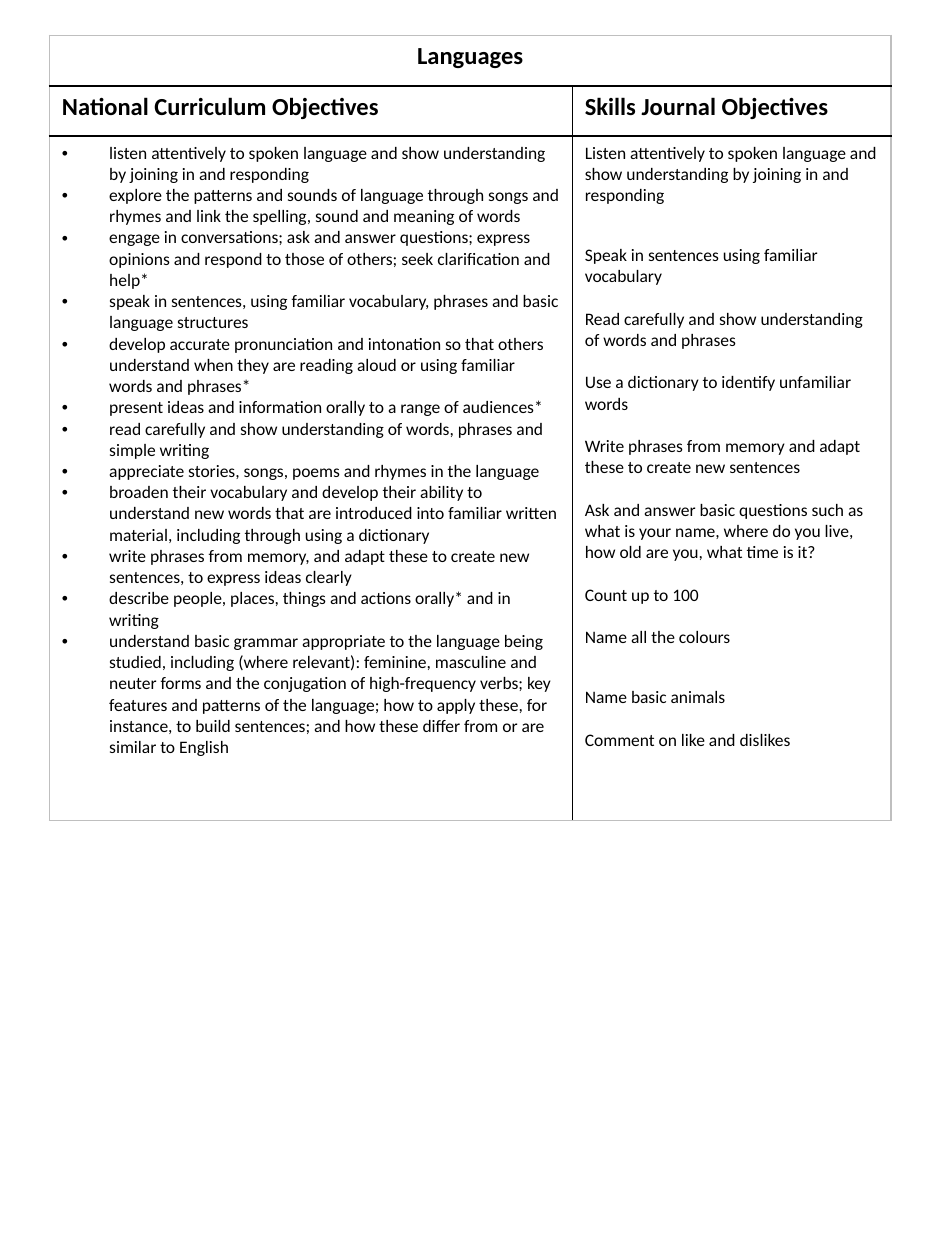
"""Build a one-page table of language curriculum and skills journal objectives."""
from lxml import etree
from pptx import Presentation
from pptx.dml.color import RGBColor
from pptx.enum.text import PP_ALIGN
from pptx.oxml.ns import qn
from pptx.util import Pt

LEFT, CENTER = PP_ALIGN.LEFT, PP_ALIGN.CENTER
BLACK, GREY, WHITE = "000000", "BFBFBF", "FFFFFF"
ROW_HEIGHTS = [28.8, 28.8, 391]
COLUMN_WIDTHS = [298.8, 182.2]
LINE_GAP, WIDE_GAP = 12.2, 22

NATIONAL_OBJECTIVES = [
    "listen attentively to spoken language and show understanding by joining in and responding",
    "explore the patterns and sounds of language through songs and rhymes and link the spelling, "
    "sound and meaning of words",
    "engage in conversations; ask and answer questions; express opinions and respond to those of "
    "others; seek clarification and help*",
    "speak in sentences, using familiar vocabulary, phrases and basic language structures",
    "develop accurate pronunciation and intonation so that others understand when they are reading "
    "aloud or using familiar words and phrases*",
    "present ideas and information orally to a range of audiences*",
    "read carefully and show understanding of words, phrases and simple writing",
    "appreciate stories, songs, poems and rhymes in the language",
    "broaden their vocabulary and develop their ability to understand new words that are introduced "
    "into familiar written material, including through using a dictionary",
    "write phrases from memory, and adapt these to create new sentences, to express ideas clearly",
    "describe people, places, things and actions orally* and in writing",
    "understand basic grammar appropriate to the language being studied, including (where relevant): "
    "feminine, masculine and neuter forms and the conjugation of high-frequency verbs; key features "
    "and patterns of the language; how to apply these, for instance, to build sentences; and how "
    "these differ from or are similar to English",
]
SKILLS_OBJECTIVES = [
    ("Listen attentively to spoken language and show understanding by joining in and responding", 0),
    ("Speak in sentences using familiar vocabulary", WIDE_GAP),
    ("Read carefully and show understanding of words and phrases", LINE_GAP),
    ("Use a dictionary to identify unfamiliar words", LINE_GAP),
    ("Write phrases from memory and adapt these to create new sentences", LINE_GAP),
    ("Ask and answer basic questions such as what is your name, where do you live, "
     "how old are you, what time is it?", LINE_GAP),
    ("Count up to 100", LINE_GAP),
    ("Name all the colours", LINE_GAP),
    ("Name basic animals", WIDE_GAP),
    ("Comment on like and dislikes", LINE_GAP),
]


def write_text(cell, text, size=10, bold=False, align=LEFT, gap=0, bullet=False):
    frame = cell.text_frame
    paragraph = frame.paragraphs[0] if not cell.text else frame.add_paragraph()
    paragraph.alignment = align
    paragraph.space_before = Pt(gap)
    run = paragraph.add_run()
    run.text = text
    run.font.name = "Calibri"
    run.font.size = Pt(size)
    run.font.bold = bold
    run.font.color.rgb = RGBColor.from_string(BLACK)
    if bullet:
        properties = paragraph._p.get_or_add_pPr()
        properties.set("marL", str(Pt(27)))
        properties.set("indent", str(-Pt(27)))
        etree.SubElement(properties, qn("a:buFont"), typeface="Arial")
        etree.SubElement(properties, qn("a:buChar"), char="•")


def add_border(cell, side, color):
    line = etree.SubElement(cell._tc.get_or_add_tcPr(), qn(f"a:ln{side}"), w=str(Pt(1)))
    fill = etree.SubElement(line, qn("a:solidFill"))
    etree.SubElement(fill, qn("a:srgbClr"), val=color)


presentation = Presentation()
presentation.slide_width = Pt(540)
presentation.slide_height = Pt(720)
slide = presentation.slides.add_slide(presentation.slide_layouts[6])

table = slide.shapes.add_table(
    3, 2, Pt(28.2), Pt(20.2), Pt(sum(COLUMN_WIDTHS)), Pt(sum(ROW_HEIGHTS))
).table
for column, width in zip(table.columns, COLUMN_WIDTHS):
    column.width = Pt(width)
for row, height in zip(table.rows, ROW_HEIGHTS):
    row.height = Pt(height)

for row in range(3):
    for column in range(2):
        cell = table.cell(row, column)
        add_border(cell, "L", GREY if column == 0 else BLACK)
        add_border(cell, "R", GREY if column == 1 else BLACK)
        add_border(cell, "T", GREY if row == 0 else BLACK)
        add_border(cell, "B", GREY if row == 2 else BLACK)
        cell.fill.solid()
        cell.fill.fore_color.rgb = RGBColor.from_string(WHITE)

heading = table.cell(0, 0)
heading.merge(table.cell(0, 1))
for side in heading._tc.tcPr.findall(qn("a:lnR")):
    side.find(qn("a:solidFill"))[0].set("val", GREY)
write_text(heading, "Languages", size=14, bold=True, align=CENTER)
write_text(table.cell(1, 0), "National Curriculum Objectives", size=14, bold=True)
write_text(table.cell(1, 1), "Skills Journal Objectives", size=14, bold=True)

for objective in NATIONAL_OBJECTIVES:
    write_text(table.cell(2, 0), objective, bullet=True)
for objective, gap in SKILLS_OBJECTIVES:
    write_text(table.cell(2, 1), objective, gap=gap)

presentation.save("out.pptx")
